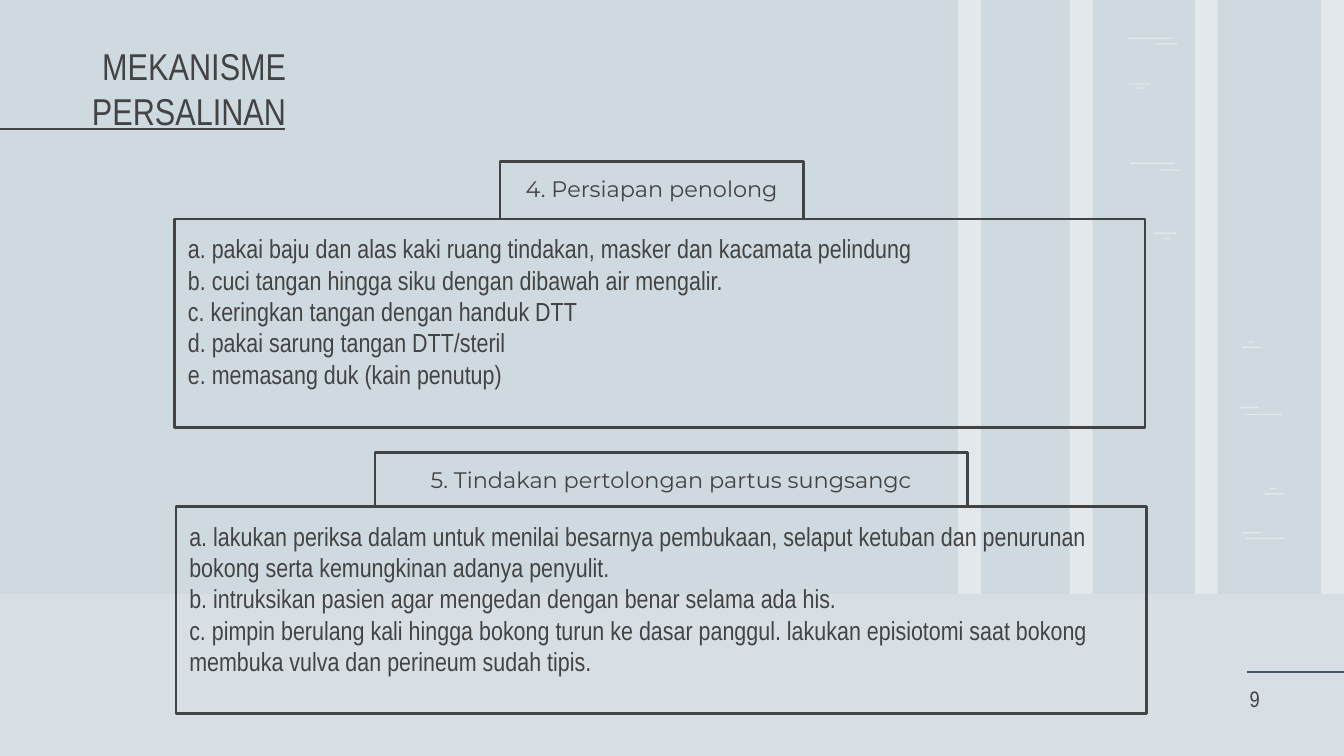
from dataclasses import dataclass

from lxml.etree import SubElement
from pptx import Presentation
from pptx.dml.color import RGBColor as Color
from pptx.enum.shapes import MSO_CONNECTOR as Connector, MSO_SHAPE as Shape
from pptx.enum.text import MSO_ANCHOR as Anchor, MSO_AUTO_SIZE as AutoSize, PP_ALIGN as Align
from pptx.oxml.ns import qn
from pptx.util import Inches, Pt


@dataclass(frozen=True)
class Theme:
    sky: Color = Color.from_string("CFD9E0")
    white: Color = Color.from_string("FFFFFF")
    ink: Color = Color.from_string("434343")
    accent: Color = Color.from_string("44546A")
    body_font: str = "Arial Narrow"
    heading_font: str = "Montserrat"
    title_size: int = 20
    body_size: int = 14
    small_size: int = 12
    line_width: float = 1.5
    inset: float = 0.1


THEME = Theme()
PAGE_WIDTH = 10
PAGE_HEIGHT = PAGE_WIDTH * 9 / 16
HORIZON = 4.42
TRUNKS = [7.13, 7.96, 8.89, 9.83]
BARK_MARKS = [
    (8.39, 0.28, 0.33), (8.6, 0.32, 0.16), (8.4, 0.62, 0.16), (8.46, 0.65, 0.06),
    (8.41, 1.21, 0.33), (8.63, 1.26, 0.16), (8.59, 1.73, 0.16), (8.65, 1.77, 0.06),
    (9.28, 2.54, 0.05), (9.24, 2.58, 0.14), (9.22, 3.03, 0.14), (9.26, 3.08, 0.28),
    (9.45, 3.63, 0.05), (9.41, 3.67, 0.14), (9.24, 3.96, 0.14), (9.27, 4, 0.29),
]
HELPER_STEPS = [
    "a. pakai baju dan alas kaki ruang tindakan, masker dan kacamata pelindung",
    "b. cuci tangan hingga siku dengan dibawah air mengalir.",
    "c. keringkan tangan dengan handuk DTT",
    "d. pakai sarung tangan DTT/steril",
    "e. memasang duk (kain penutup)",
]
BREECH_STEPS = [
    "a. lakukan periksa dalam untuk menilai besarnya pembukaan, selaput ketuban dan "
    "penurunan bokong serta kemungkinan adanya penyulit.",
    "b. intruksikan pasien agar mengedan dengan benar selama ada his.",
    "c. pimpin berulang kali hingga bokong turun ke dasar panggul. lakukan episiotomi "
    "saat bokong membuka vulva dan perineum sudah tipis.",
]


def inches(values):
    return [Inches(value) for value in values]


def add_veil(page, area, opacity):
    veil = page.shapes.add_shape(Shape.RECTANGLE, *inches(area))
    veil.shadow.inherit = False
    veil.line.fill.background()
    veil.fill.solid()
    veil.fill.fore_color.rgb = THEME.white
    color = veil.element.spPr.find(qn("a:solidFill")).find(qn("a:srgbClr"))
    SubElement(color, qn("a:alpha")).set("val", str(opacity * 1000))


def add_rule(page, left, right, top, color):
    rule = page.shapes.add_connector(Connector.STRAIGHT, *inches((left, top, right, top)))
    rule.line.color.rgb = color
    rule.line.width = Pt(THEME.line_width)
    SubElement(rule.element.spPr, qn("a:effectLst"))


def write(box, lines, size, font=THEME.body_font, align=Align.LEFT, anchor=Anchor.TOP):
    frame = box.text_frame
    frame.word_wrap = True
    frame.auto_size = AutoSize.NONE
    frame.vertical_anchor = anchor
    frame.margin_left = frame.margin_right = Inches(THEME.inset)
    frame.margin_top = frame.margin_bottom = Inches(THEME.inset)
    for index, line in enumerate(lines):
        para = frame.add_paragraph() if index else frame.paragraphs[0]
        para.alignment = align
        span = para.add_run()
        span.text = line
        span.font.name = font
        span.font.size = Pt(size)
        span.font.color.rgb = THEME.ink


def add_frame(page, area):
    box = page.shapes.add_shape(Shape.RECTANGLE, *inches(area))
    box.shadow.inherit = False
    box.fill.background()
    box.line.color.rgb = THEME.ink
    box.line.width = Pt(THEME.line_width)
    return box


def add_section(page, heading, heading_area, steps, steps_area):
    write(add_frame(page, heading_area), [heading], THEME.small_size,
          THEME.heading_font, Align.CENTER)
    write(add_frame(page, steps_area), steps, THEME.body_size)


def add_title(page, text, area):
    title = page.shapes.title
    title.left, title.top, title.width, title.height = inches(area)
    write(title, [text], THEME.title_size, align=Align.RIGHT, anchor=Anchor.BOTTOM)


def add_page_number(page, number, area):
    box = page.shapes.add_textbox(*inches(area))
    write(box, [number], THEME.small_size, anchor=Anchor.BOTTOM)


def add_scenery(page):
    for left in TRUNKS:
        add_veil(page, (left, 0, 0.17, HORIZON), 40)
    for left, top, width in BARK_MARKS:
        add_veil(page, (left, top, width, 0.01), 40)
    add_veil(page, (0, HORIZON, PAGE_WIDTH, PAGE_HEIGHT - HORIZON), 17)


def main():
    deck = Presentation()
    deck.slide_width, deck.slide_height = inches((PAGE_WIDTH, PAGE_HEIGHT))
    page = deck.slides.add_slide(deck.slide_layouts[5])
    page.background.fill.solid()
    page.background.fill.fore_color.rgb = THEME.sky
    add_scenery(page)
    add_rule(page, 9.28, PAGE_WIDTH, 5, THEME.accent)
    add_rule(page, 0, 2.12, 0.96, THEME.ink)
    add_title(page, "MEKANISME PERSALINAN", (0, 0.77, 2.23, 0.32))
    add_section(page, "4. Persiapan penolong", (3.72, 1.2, 2.26, 0.43),
                HELPER_STEPS, (1.3, 1.63, 7.22, 1.55))
    add_section(page, "5. Tindakan pertolongan partus sungsangc", (2.79, 3.37, 4.41, 0.4),
                BREECH_STEPS, (1.31, 3.77, 7.22, 1.54))
    add_page_number(page, "9", (9.2, 4.97, 0.35, 0.43))
    deck.save("out.pptx")


if __name__ == "__main__":
    main()
